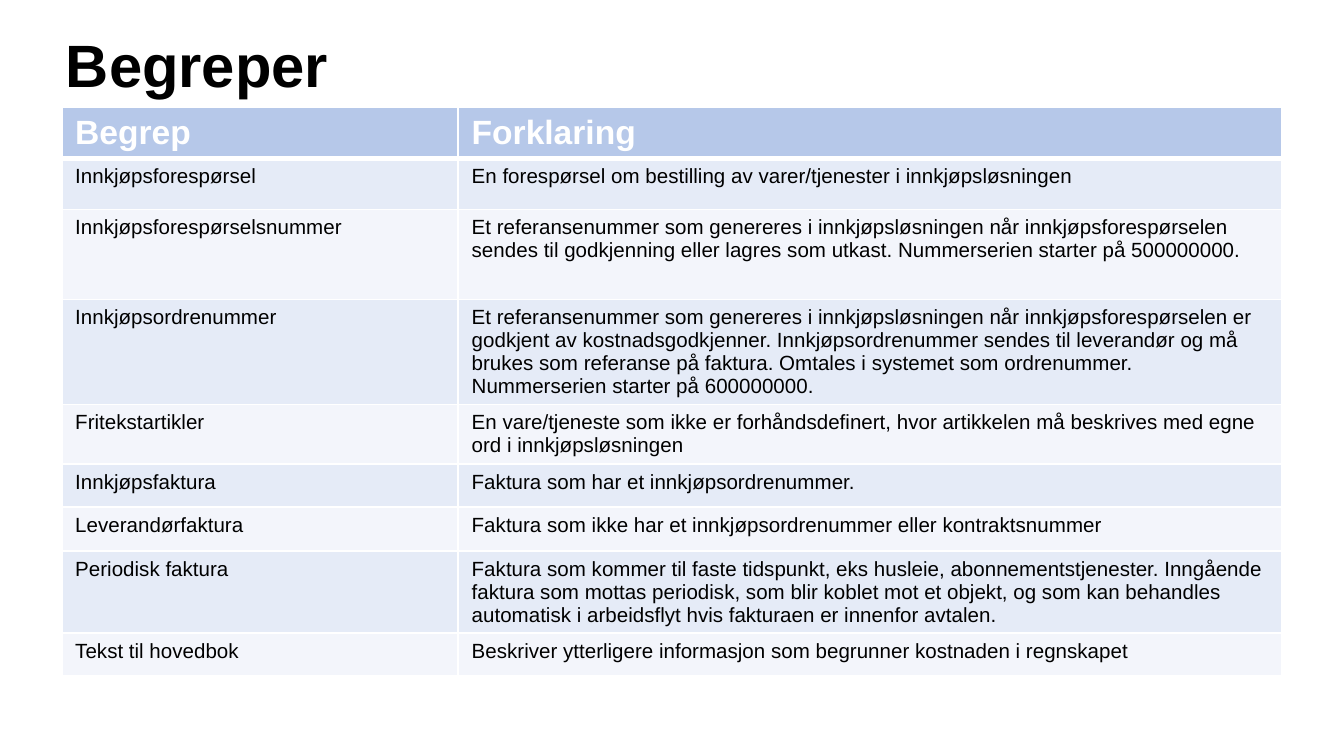
from dataclasses import dataclass

import lxml.etree
import pptx
import pptx.dml.color
import pptx.enum.text
import pptx.oxml.ns
import pptx.slide
import pptx.table
import pptx.util

RGBColor = pptx.dml.color.RGBColor
WHITE = RGBColor(0xFF, 0xFF, 0xFF)
BLACK = RGBColor(0x00, 0x00, 0x00)
HEADER_BLUE = RGBColor(0xB6, 0xC8, 0xE9)
BAND_COLORS = (RGBColor(0xE5, 0xEB, 0xF7), RGBColor(0xF3, 0xF5, 0xFB))

FONT = "Arial"
SLIDE_WIDTH = pptx.util.Inches(10)
SLIDE_HEIGHT = SLIDE_WIDTH * 9 // 16
COLUMN_WIDTHS = (2.95, 6.13)
THIN, THICK = 1, 3


@dataclass(frozen=True)
class Term:
    name: str
    explanation: str
    height: float


HEADER = Term("Begrep", "Forklaring", 0.37)
TERMS = (
    Term("Innkjøpsforespørsel",
         "En forespørsel om bestilling av varer/tjenester i innkjøpsløsningen", 0.38),
    Term("Innkjøpsforespørselsnummer",
         "Et referansenummer som genereres i innkjøpsløsningen når innkjøpsforespørselen "
         "sendes til godkjenning eller lagres som utkast. Nummerserien starter på 500000000.",
         0.67),
    Term("Innkjøpsordrenummer",
         "Et referansenummer som genereres i innkjøpsløsningen når innkjøpsforespørselen er "
         "godkjent av kostnadsgodkjenner. Innkjøpsordrenummer sendes til leverandør og må "
         "brukes som referanse på faktura. Omtales i systemet som ordrenummer. "
         "Nummerserien starter på 600000000.", 0.78),
    Term("Fritekstartikler",
         "En vare/tjeneste som ikke er forhåndsdefinert, hvor artikkelen må beskrives med "
         "egne ord i innkjøpsløsningen", 0.44),
    Term("Innkjøpsfaktura", "Faktura som har et innkjøpsordrenummer.", 0.32),
    Term("Leverandørfaktura",
         "Faktura som ikke har et innkjøpsordrenummer eller kontraktsnummer", 0.33),
    Term("Periodisk faktura",
         "Faktura som kommer til faste tidspunkt, eks husleie, abonnementstjenester. "
         "Inngående faktura som mottas periodisk, som blir koblet mot et objekt, og som kan "
         "behandles automatisk i arbeidsflyt hvis fakturaen er innenfor avtalen.", 0.61),
    Term("Tekst til hovedbok",
         "Beskriver ytterligere informasjon som begrunner kostnaden i regnskapet", 0.32),
)


def format_paragraph(para, size: int, color: RGBColor, bold: bool) -> None:
    para.alignment = pptx.enum.text.PP_ALIGN.LEFT
    para.font.name = FONT
    para.font.size = pptx.util.Pt(size)
    para.font.bold = bold
    para.font.color.rgb = color


def add_borders(cell: pptx.table._Cell, top: int, bottom: int) -> None:
    qn = pptx.oxml.ns.qn
    properties = cell._tc.get_or_add_tcPr()
    for side, width in {"L": THIN, "R": THIN, "T": top, "B": bottom}.items():
        line = lxml.etree.SubElement(properties, qn(f"a:ln{side}"), w=str(pptx.util.Pt(width)))
        fill = lxml.etree.SubElement(line, qn("a:solidFill"))
        lxml.etree.SubElement(fill, qn("a:srgbClr"), val=str(WHITE))


def fill_row(table: pptx.table.Table, index: int, term: Term) -> None:
    is_header = index == 0
    table.rows[index].height = pptx.util.Inches(term.height)
    for column, text in enumerate((term.name, term.explanation)):
        cell = table.cell(index, column)
        add_borders(cell, THICK if index == 1 else THIN, THICK if is_header else THIN)
        cell.fill.solid()
        cell.fill.fore_color.rgb = HEADER_BLUE if is_header else BAND_COLORS[(index - 1) % 2]
        cell.text = text
        para = cell.text_frame.paragraphs[0]
        if is_header:
            format_paragraph(para, 18, WHITE, True)
        else:
            format_paragraph(para, 11, BLACK, False)


def add_glossary(page: pptx.slide.Slide) -> None:
    rows = (HEADER, *TERMS)
    frame = page.shapes.add_table(
        len(rows), len(COLUMN_WIDTHS),
        pptx.util.Inches(0.46), pptx.util.Inches(0.8),
        pptx.util.Inches(sum(COLUMN_WIDTHS)),
        pptx.util.Inches(sum(row.height for row in rows)))
    for column, width in zip(frame.table.columns, COLUMN_WIDTHS):
        column.width = pptx.util.Inches(width)
    for index, term in enumerate(rows):
        fill_row(frame.table, index, term)


def set_title(page: pptx.slide.Slide, text: str) -> None:
    title = page.shapes.title
    title.left, title.top = pptx.util.Inches(0.39), pptx.util.Inches(0.15)
    title.width, title.height = pptx.util.Inches(9.21), pptx.util.Inches(0.64)
    title.text_frame.text = text
    title.text_frame.vertical_anchor = pptx.enum.text.MSO_ANCHOR.BOTTOM
    format_paragraph(title.text_frame.paragraphs[0], 32, BLACK, True)


def main() -> None:
    deck = pptx.Presentation()
    deck.slide_width, deck.slide_height = SLIDE_WIDTH, SLIDE_HEIGHT
    page = deck.slides.add_slide(deck.slide_layouts.get_by_name("Title Only"))
    set_title(page, "Begreper")
    add_glossary(page)
    deck.save("out.pptx")


if __name__ == "__main__":
    main()
